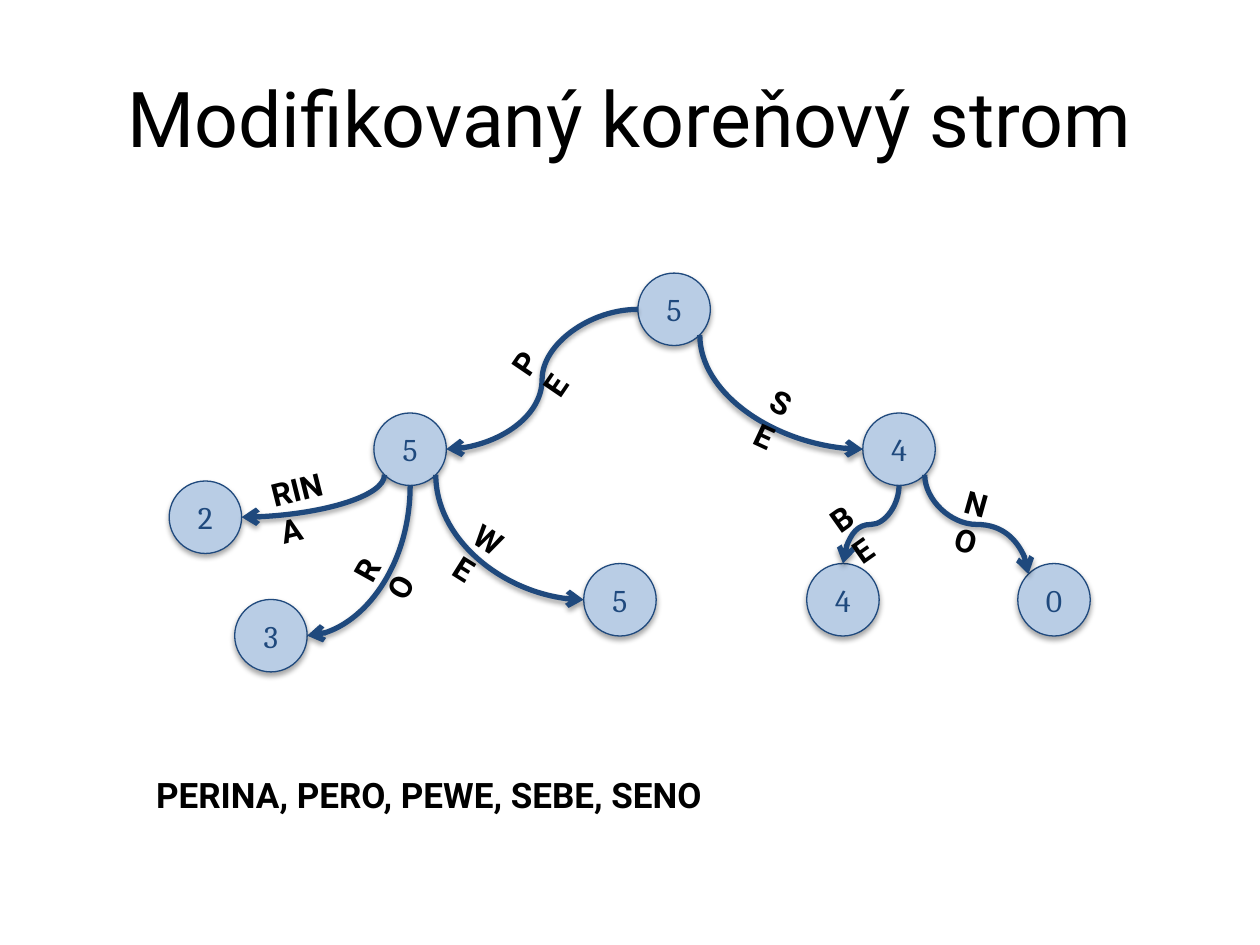
from dataclasses import dataclass
from math import cos, radians, sin

from lxml.etree import SubElement
from pptx import Presentation
from pptx.dml.color import RGBColor
from pptx.enum.shapes import MSO_CONNECTOR, MSO_SHAPE
from pptx.enum.text import MSO_ANCHOR, PP_ALIGN
from pptx.oxml.ns import qn
from pptx.util import Inches, Pt

COLUMNS, ROWS = 100, 75
NODE_SIZE = 5.75
SITES = ["top", "top left", "left", "bottom left", "bottom", "bottom right", "right", "top right"]

NODES = {
    "root": ("5", 53.5, 24.55),
    "PE": ("5", 32.55, 35.65),
    "SE": ("4", 71.35, 35.65),
    "PERINA": ("2", 16.3, 41.05),
    "PERO": ("3", 21.5, 50.45),
    "PEWE": ("5", 49.2, 47.6),
    "SEBE": ("4", 66.9, 47.6),
    "SENO": ("0", 83.65, 47.6),
}
EDGES = [
    ("root", "left", "PE", "right", 3),
    ("root", "bottom right", "SE", "left", 2),
    ("PE", "bottom left", "PERINA", "right", 2),
    ("PE", "bottom", "PERO", "right", 2),
    ("PE", "bottom right", "PEWE", "left", 2),
    ("SE", "bottom", "SEBE", "top", 3),
    ("SE", "bottom right", "SENO", "top left", 3),
]
EDGE_LABELS = [
    ("PE", 39.6, 26.4, 4.6, -55.8),
    ("SE", 60.2, 30.1, 4.4, 24.9),
    ("RINA", 20.5, 36.7, 7.3, -14),
    ("RO", 26.9, 42.5, 5.1, -60.8),
    ("WE", 36.6, 41.2, 5.5, 32.2),
    ("BE", 64.9, 38.8, 4.7, -35.3),
    ("NO", 75.6, 38.2, 5.4, 15.6),
]


@dataclass(frozen=True)
class Theme:
    """Colours, fonts and type sizes of the slide."""

    ink: RGBColor = RGBColor(0, 0, 0)
    navy: RGBColor = RGBColor(0x1F, 0x49, 0x7D)
    pale: RGBColor = RGBColor(0xB9, 0xCD, 0xE5)
    text_font: str = "Roboto"
    node_font: str = "Cambria"
    title_size: int = 44
    words_size: int = 20
    label_size: int = 18


class TreeSlide:
    """Draws a radix tree on a slide measured in columns and rows."""

    def __init__(self, presentation, theme):
        self.theme = theme
        self.slide = presentation.slides.add_slide(presentation.slide_layouts[5])
        self.column = presentation.slide_width / COLUMNS
        self.row = presentation.slide_height / ROWS
        self.nodes = {}

    def box(self, left, top, width, height):
        return (round(left * self.column), round(top * self.row),
                round(width * self.column), round(height * self.row))

    def set_text(self, shape, text, size, color, font, bold=False, align=PP_ALIGN.LEFT):
        shape.text_frame.text = text
        paragraph = shape.text_frame.paragraphs[0]
        paragraph.alignment = align
        paragraph.font.size = Pt(size)
        paragraph.font.name = font
        paragraph.font.bold = bold
        paragraph.font.color.rgb = color

    def cast_shadow(self, shape):
        properties = shape._element.spPr
        for effects in properties.findall(qn("a:effectLst")):
            properties.remove(effects)
        effects = SubElement(properties, qn("a:effectLst"))
        shadow = SubElement(effects, qn("a:outerShdw"), blurRad=str(int(Pt(3.1))),
                            dist=str(int(Pt(1.8))), dir="5400000", rotWithShape="0")
        color = SubElement(shadow, qn("a:srgbClr"), val="000000")
        SubElement(color, qn("a:alpha"), val="35000")

    def title(self, text):
        shape = self.slide.shapes.title
        shape.left, shape.top, shape.width, shape.height = self.box(5, 3, 90, 12.5)
        shape.text_frame.vertical_anchor = MSO_ANCHOR.MIDDLE
        self.set_text(shape, text, self.theme.title_size, self.theme.ink,
                      self.theme.text_font, align=PP_ALIGN.CENTER)

    def node(self, name, text, center_x, center_y):
        half = NODE_SIZE / 2
        shape = self.slide.shapes.add_shape(
            MSO_SHAPE.OVAL, *self.box(center_x - half, center_y - half, NODE_SIZE, NODE_SIZE))
        shape.fill.solid()
        shape.fill.fore_color.rgb = self.theme.pale
        shape.line.color.rgb = self.theme.navy
        shape.line.width = Pt(0.75)
        shape.text_frame.vertical_anchor = MSO_ANCHOR.MIDDLE
        self.set_text(shape, text, self.theme.label_size, self.theme.navy,
                      self.theme.node_font, align=PP_ALIGN.CENTER)
        self.cast_shadow(shape)
        self.nodes[name] = shape

    def site_point(self, node, site):
        angle = radians(45 * SITES.index(site))
        radius = node.width / 2
        return (round(node.left + radius - radius * sin(angle)),
                round(node.top + radius - radius * cos(angle)))

    def edge(self, parent, parent_site, child, child_site, bends):
        ends = [(self.nodes[parent], parent_site), (self.nodes[child], child_site)]
        (begin_x, begin_y), (end_x, end_y) = [self.site_point(*end) for end in ends]
        connector = self.slide.shapes.add_connector(
            MSO_CONNECTOR.CURVE, begin_x, begin_y, end_x, end_y)
        element = connector._element
        element.spPr.find(qn("a:prstGeom")).set("prst", f"curvedConnector{bends}")
        if parent_site.startswith("bottom"):
            width, height = abs(end_y - begin_y), abs(end_x - begin_x)
            connector.left = (begin_x + end_x - width) // 2
            connector.top = (begin_y + end_y - height) // 2
            connector.width, connector.height = width, height
            rightward = end_x > begin_x
            transform = element.spPr.find(qn("a:xfrm"))
            transform.set("rot", "16200000" if rightward else "5400000")
            transform.set("flipH", "1" if rightward else "0")
        joints = element.find(".//" + qn("p:cNvCxnSpPr"))
        for tag, (node, site) in zip(("a:stCxn", "a:endCxn"), ends):
            SubElement(joints, qn(tag), id=str(node.shape_id), idx=str(SITES.index(site)))
        connector.line.color.rgb = self.theme.navy
        connector.line.width = Pt(3)
        SubElement(element.spPr.find(qn("a:ln")), qn("a:tailEnd"), type="arrow")
        self.cast_shadow(connector)

    def label(self, text, left, top, width, height=4, rotation=0, size=None):
        shape = self.slide.shapes.add_textbox(*self.box(left, top, width, height))
        shape.rotation = rotation
        shape.text_frame.word_wrap = True
        self.set_text(shape, text, size or self.theme.label_size, self.theme.ink,
                      self.theme.text_font, bold=True)


def main():
    presentation = Presentation()
    presentation.slide_width, presentation.slide_height = Inches(10), Inches(7.5)
    theme = Theme()
    tree = TreeSlide(presentation, theme)
    tree.title("Modifikovaný koreňový strom")
    for name, (text, center_x, center_y) in NODES.items():
        tree.node(name, text, center_x, center_y)
    for edge in EDGES:
        tree.edge(*edge)
    for text, left, top, width, rotation in EDGE_LABELS:
        tree.label(text, left, top, width, rotation=rotation)
    tree.label("PERINA, PERO, PEWE, SEBE, SENO", 11.4, 60.9, 46.6, 4.4, size=theme.words_size)
    presentation.save("out.pptx")


if __name__ == "__main__":
    main()
